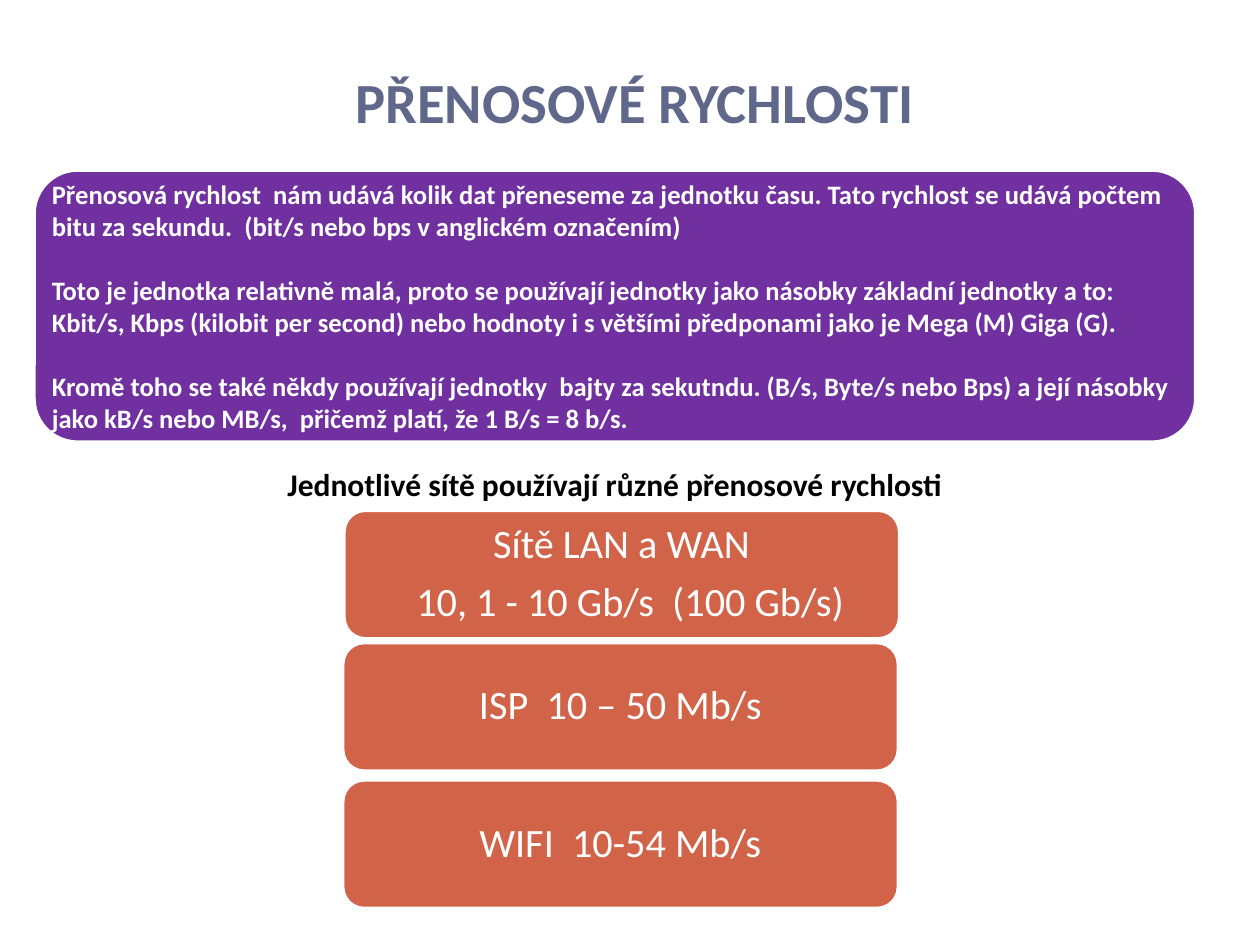
from pptx import Presentation
from pptx.dml.color import RGBColor
from pptx.enum import shapes, text
from pptx.util import Inches, Pt

DEFINITION = [
    "Přenosová rychlost  nám udává kolik dat přeneseme za jednotku času. Tato rychlost se udává "
    "počtem bitu za sekundu.  (bit/s nebo bps v anglickém označením)",
    "Toto je jednotka relativně malá, proto se používají jednotky jako násobky základní jednotky "
    "a to:  Kbit/s, Kbps (kilobit per second) nebo hodnoty i s většími předponami jako je "
    "Mega (M) Giga (G).",
    "Kromě toho se také někdy používají jednotky  bajty za sekutndu. (B/s, Byte/s nebo Bps) a její "
    "násobky jako kB/s nebo MB/s,  přičemž platí, že 1 B/s = 8 b/s.",
]
NETWORKS = [
    (2.73, 4.05, ["Sítě LAN a WAN", "10, 1 - 10 Gb/s  (100 Gb/s)"]),
    (2.72, 5.10, ["ISP  10 – 50 Mb/s"]),
    (2.72, 6.19, ["WIFI  10-54 Mb/s"]),
]
CENTRED = {"alignment": text.PP_ALIGN.CENTER}
LEFT = {"alignment": text.PP_ALIGN.LEFT}
CARD_SPACING = {**CENTRED, "line_spacing": 0.9, "space_after": Pt(8)}
CARD_INSETS = {
    "margin_left": Inches(0.04), "margin_right": Inches(0.04),
    "margin_top": Inches(0.1), "margin_bottom": Inches(0.1),
    "vertical_anchor": text.MSO_ANCHOR.MIDDLE,
}


def color(hex_value):
    return RGBColor.from_string(hex_value)


def apply(target, values):
    for name, value in values.items():
        setattr(target, name, value)


def write(frame, lines, size, ink, bold, layout):
    frame.word_wrap = True
    for index, line in enumerate(lines):
        paragraph = frame.paragraphs[0] if index == 0 else frame.add_paragraph()
        apply(paragraph, layout)
        run = paragraph.add_run()
        run.text = line
        apply(run.font, {"name": "Calibri", "size": Pt(size), "bold": bold})
        run.font.color.rgb = color(ink)


def add_heading(slide, box, line, size, ink, anchor):
    heading = slide.shapes.add_textbox(*map(Inches, box))
    heading.text_frame.vertical_anchor = anchor
    write(heading.text_frame, [line], size, ink, True, CENTRED)


def add_card(slide, box, fill, lines, size, bold, layout):
    card = slide.shapes.add_shape(shapes.MSO_SHAPE.ROUNDED_RECTANGLE, *map(Inches, box))
    card.shadow.inherit = False
    card.fill.solid()
    card.fill.fore_color.rgb = color(fill)
    card.line.color.rgb = color("FFFFFF")
    card.line.width = Pt(2)
    apply(card.text_frame, CARD_INSETS)
    write(card.text_frame, lines, size, "FFFFFF", bold, layout)
    return card


def indent(paragraph, inches):
    paragraph._p.get_or_add_pPr().set("marL", str(Inches(inches)))


def main():
    deck = Presentation()
    apply(deck, {"slide_width": Inches(10), "slide_height": Inches(7.5)})
    slide = deck.slides.add_slide(deck.slide_layouts[6])

    add_heading(slide, (0.43, 0.44, 9.21, 0.68), "PŘENOSOVÉ RYCHLOSTI", 32.4, "5F688B",
                text.MSO_ANCHOR.BOTTOM)
    for left, top, lines in NETWORKS:
        card = add_card(slide, (left, top, 4.41, 1.02), "D16349", lines, 23, False, CARD_SPACING)
        for rate in card.text_frame.paragraphs[1:]:
            indent(rate, 0.14)

    definition = add_card(slide, (0.27, 1.35, 9.22, 2.16), "7030A0", DEFINITION, 15.2, True, LEFT)
    definition.adjustments[0] = 0.16
    for paragraph in definition.text_frame.paragraphs[:-1]:
        paragraph.space_after = Pt(18.5)

    add_heading(slide, (1.14, 3.64, 7.48, 0.4),
                "Jednotlivé sítě používají různé přenosové rychlosti", 18, "000000",
                text.MSO_ANCHOR.TOP)
    deck.save("out.pptx")


if __name__ == "__main__":
    main()
